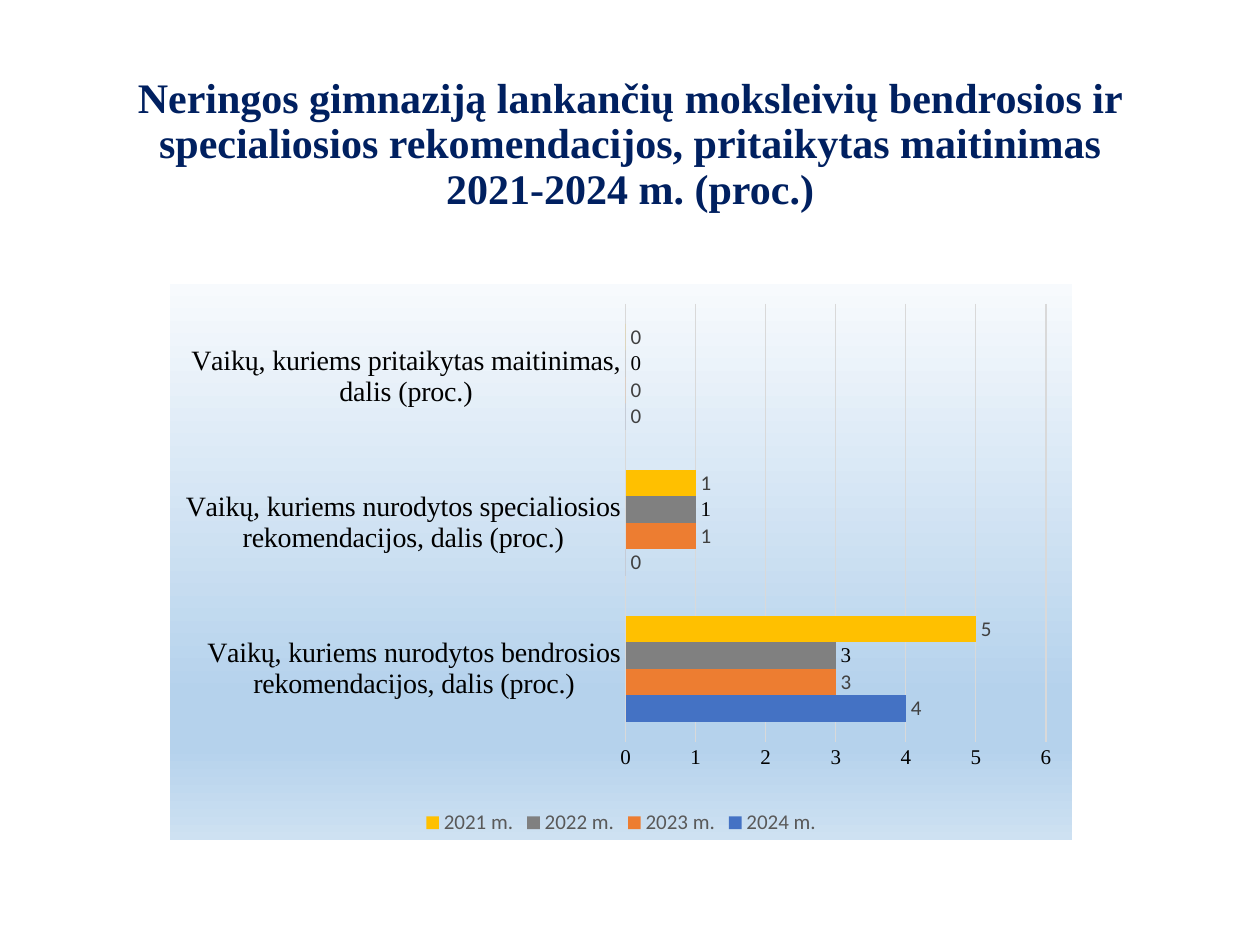
from pptx import Presentation
from pptx.chart.data import CategoryChartData
from pptx.dml.color import RGBColor
from pptx.enum.chart import XL_CHART_TYPE, XL_LABEL_POSITION, XL_LEGEND_POSITION, XL_TICK_MARK
from pptx.enum.text import MSO_ANCHOR, PP_ALIGN
from pptx.oxml import parse_xml
from pptx.oxml.ns import nsdecls
from pptx.util import Pt

COLORS = {
    "navy": "002060", "black": "000000", "dark": "404040", "gray": "595959",
    "grid": "D9D9D9", "2024 m.": "4472C4", "2023 m.": "ED7D31",
    "2022 m.": "808080", "2021 m.": "FFC000",
}
SERIF, SANS = "Times New Roman", "Calibri"


def style(font, size, name, color):
    font.size = Pt(size)
    font.name = name
    font.color.rgb = RGBColor.from_string(COLORS[color])


deck = Presentation()
deck.slide_width, deck.slide_height = Pt(720), Pt(540)
slide = deck.slides.add_slide(deck.slide_layouts[6])

# Title
title = slide.shapes.add_textbox(Pt(22.3), Pt(47.5), Pt(675.4), Pt(77.8))
frame = title.text_frame
frame.word_wrap = True
frame.vertical_anchor = MSO_ANCHOR.BOTTOM
frame.text = ("Neringos gimnaziją lankančių moksleivių bendrosios ir specialiosios "
              "rekomendacijos, pritaikytas maitinimas\v2021-2024 m. (proc.)")
para = frame.paragraphs[0]
para.alignment = PP_ALIGN.CENTER
para.line_spacing = 0.9
for run in para.runs:
    style(run.font, 24, SERIF, "navy")
    run.font.bold = True

# Chart data
data = CategoryChartData()
data.categories = [
    "Vaikų, kuriems nurodytos bendrosios rekomendacijos, dalis (proc.)",
    "Vaikų, kuriems nurodytos specialiosios rekomendacijos, dalis (proc.)",
    "Vaikų, kuriems pritaikytas maitinimas, dalis (proc.)",
]
data.add_series("2024 m.", (4, 0, 0))
data.add_series("2023 m.", (3, 1, 0))
data.add_series("2022 m.", (3, 1, 0))
data.add_series("2021 m.", (5, 1, 0))
chart = slide.shapes.add_chart(XL_CHART_TYPE.BAR_CLUSTERED, Pt(97.2), Pt(162),
                               Pt(515.5), Pt(318.2), data).chart
chart.has_title = False
style(chart.font, 10, SANS, "black")

# Bars and value labels
plot = chart.plots[0]
plot.gap_width = 150
plot.overlap = 0
plot.vary_by_categories = False
for series in plot.series:
    series.format.fill.solid()
    series.format.fill.fore_color.rgb = RGBColor.from_string(COLORS[series.name])
    series.invert_if_negative = False
    labels = series.data_labels
    labels.show_value = True
    labels.position = XL_LABEL_POSITION.OUTSIDE_END
    if series.name == "2022 m.":
        style(labels.font, 12, SERIF, "black")
    else:
        style(labels.font, 12, SANS, "dark")

# Axes and legend
for axis, size in ((chart.category_axis, 16), (chart.value_axis, 12)):
    axis.major_tick_mark = axis.minor_tick_mark = XL_TICK_MARK.NONE
    axis.format.line.fill.background()
    style(axis.tick_labels.font, size, SERIF, "black")
values = chart.value_axis
values.minimum_scale, values.maximum_scale, values.major_unit = 0, 6, 1
values.has_major_gridlines = True
grid = values.major_gridlines.format.line
grid.color.rgb = RGBColor.from_string(COLORS["grid"])
grid.width = Pt(0.75)

chart.has_legend = True
chart.legend.position = XL_LEGEND_POSITION.BOTTOM
chart.legend.include_in_layout = False
style(chart.legend.font, 12, SANS, "gray")

# Inner plot area
area = chart.element.xpath("c:chart/c:plotArea")[0]
for old in area.xpath("c:layout"):
    area.remove(old)
spots = {"x": 0.505, "y": 0.037, "w": 0.466, "h": 0.786}
sides = "".join(f'<c:{key}Mode val="edge"/>' for key in "xy")
sides += "".join(f'<c:{key} val="{spot}"/>' for key, spot in spots.items())
area.insert(0, parse_xml(
    f'<c:layout {nsdecls("c")}><c:manualLayout><c:layoutTarget val="inner"/>'
    f'{sides}</c:manualLayout></c:layout>'))

# Gradient behind the chart
stops = ((0, "F7FAFD"), (74, "B5D2EC"), (83, "B5D2EC"), (100, "CEE1F2"))
marks = "".join(f'<a:gs pos="{pos * 1000}"><a:srgbClr val="{color}"/></a:gs>'
                for pos, color in stops)
chart.element.xpath("c:chart")[0].addnext(parse_xml(
    f'<c:spPr {nsdecls("c", "a")}><a:gradFill><a:gsLst>{marks}</a:gsLst>'
    '<a:lin ang="5400000" scaled="1"/></a:gradFill><a:ln><a:noFill/></a:ln></c:spPr>'))

deck.save("out.pptx")
